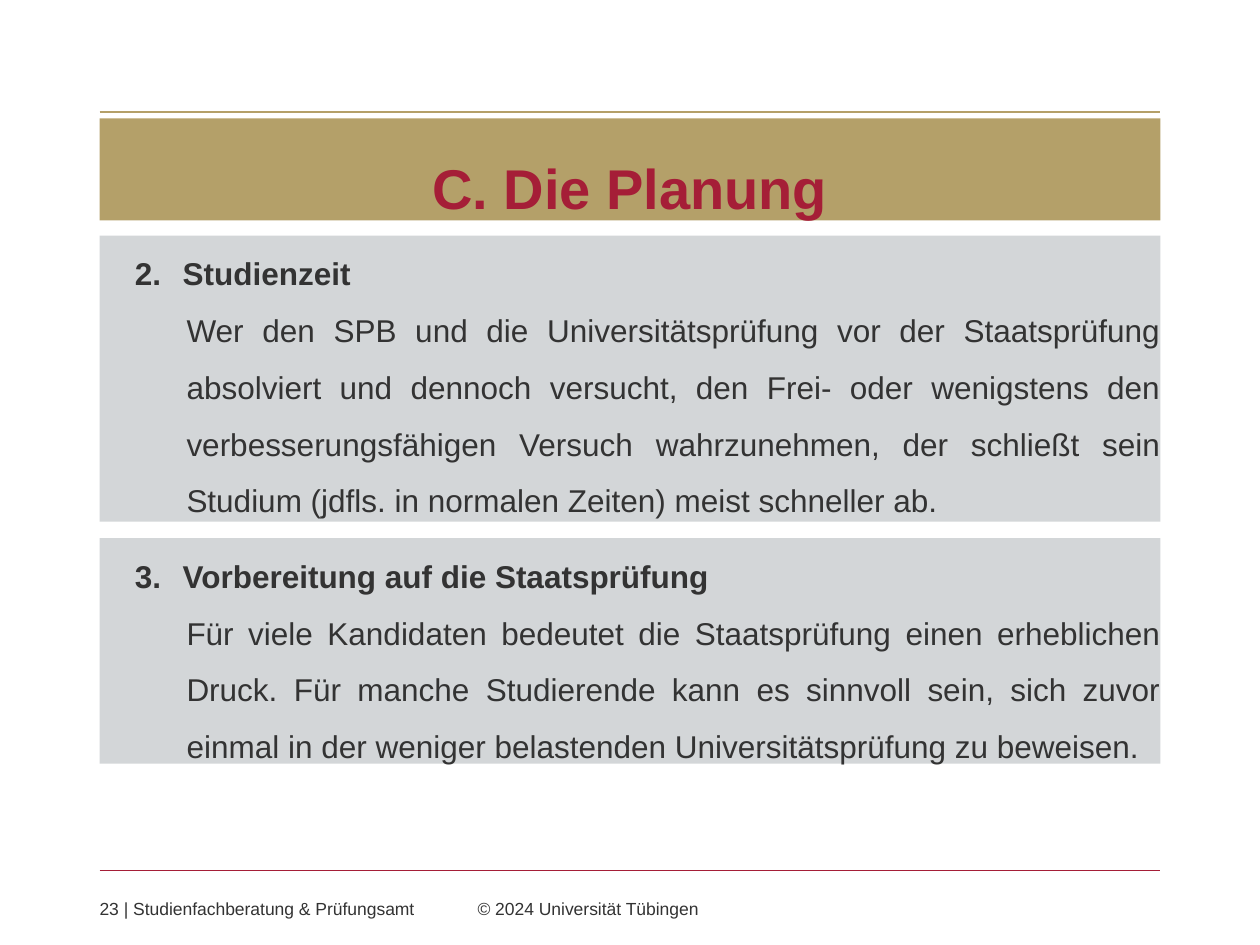
from dataclasses import dataclass

from lxml.etree import SubElement
from pptx import Presentation
from pptx.dml.color import RGBColor as Color
from pptx.enum.shapes import MSO_CONNECTOR as Connector, MSO_SHAPE as Shape
from pptx.enum.text import MSO_ANCHOR as Anchor, PP_ALIGN as Align
from pptx.oxml.ns import qn
from pptx.util import Inches, Pt


@dataclass(frozen=True)
class Theme:
    gold: Color = Color.from_string("B4A069")
    red: Color = Color.from_string("A51E37")
    grey: Color = Color.from_string("D3D6D8")
    ink: Color = Color.from_string("333333")
    font: str = "Arial"
    title_size: int = 32
    body_size: int = 18
    footer_size: int = 10
    line_spacing: float = 1.5


THEME = Theme()
SLIDE_WIDTH, SLIDE_HEIGHT = 10, 7.5
MARGIN = 0.79
CONTENT_WIDTH = SLIDE_WIDTH - 2 * MARGIN
SECTIONS = [
    (2, 1.87, 2.27, "Studienzeit",
     "Wer den SPB und die Universitätsprüfung vor der Staatsprüfung absolviert "
     "und dennoch versucht, den Frei- oder wenigstens den verbesserungsfähigen "
     "Versuch wahrzunehmen, der schließt sein Studium (jdfls. in normalen "
     "Zeiten) meist schneller ab."),
    (3, 4.27, 1.79, "Vorbereitung auf die Staatsprüfung",
     "Für viele Kandidaten bedeutet die Staatsprüfung einen erheblichen Druck. "
     "Für manche Studierende kann es sinnvoll sein, sich zuvor einmal in der "
     "weniger belastenden Universitätsprüfung zu beweisen."),
]


def apply_format(target, values):
    for name, value in values.items():
        setattr(target, name, value)


def content_box(top, height):
    return [Inches(value) for value in (MARGIN, top, CONTENT_WIDTH, height)]


def prepare_frame(shape, anchor=Anchor.TOP):
    frame = shape.text_frame
    apply_format(frame, dict(margin_left=0, margin_top=0, margin_right=0,
                             margin_bottom=0, word_wrap=True, vertical_anchor=anchor))
    return frame


def write(paragraph, text, size, color=THEME.ink, bold=False, **layout):
    run = paragraph.add_run()
    run.text = text
    apply_format(run.font, dict(name=THEME.font, size=Pt(size), bold=bold))
    run.font.color.rgb = color
    apply_format(paragraph, layout)


def set_indent(paragraph, left, first=0.0):
    properties = paragraph._p.get_or_add_pPr()
    properties.set("marL", str(Inches(left)))
    properties.set("indent", str(Inches(first)))
    return properties


def add_rule(slide, top, color):
    line = slide.shapes.add_connector(
        Connector.STRAIGHT, Inches(MARGIN), Inches(top),
        Inches(MARGIN + CONTENT_WIDTH), Inches(top))
    line.line.color.rgb = color
    line.line.width = Pt(0.75)
    SubElement(line._element.spPr, qn("a:effectLst"))


def add_panel(slide, top, height, color):
    panel = slide.shapes.add_shape(Shape.RECTANGLE, *content_box(top, height))
    panel.shadow.inherit = False
    panel.fill.solid()
    panel.fill.fore_color.rgb = color
    panel.line.fill.background()
    return panel


def add_title(slide, text):
    frame = prepare_frame(add_panel(slide, 0.94, 0.81, THEME.gold), Anchor.BOTTOM)
    write(frame.paragraphs[0], text, THEME.title_size, THEME.red, True,
          alignment=Align.CENTER, line_spacing=THEME.line_spacing)


def add_section(slide, number, top, height, heading, body):
    frame = prepare_frame(add_panel(slide, top, height, THEME.grey))
    first = frame.paragraphs[0]
    properties = set_indent(first, 0.66, -0.38)
    SubElement(properties, qn("a:buFont"), typeface="+mj-lt")
    SubElement(properties, qn("a:buAutoNum"), type="arabicPeriod", startAt=str(number))
    write(first, heading, THEME.body_size, bold=True,
          alignment=Align.LEFT, line_spacing=THEME.line_spacing)
    second = frame.add_paragraph()
    set_indent(second, 0.69)
    write(second, body, THEME.body_size,
          alignment=Align.JUSTIFY, line_spacing=THEME.line_spacing)


def add_footer(slide, text):
    frame = prepare_frame(slide.shapes.add_textbox(*content_box(7.13, 0.17)))
    paragraph = frame.paragraphs[0]
    tabs = SubElement(paragraph._p.get_or_add_pPr(), qn("a:tabLst"))
    SubElement(tabs, qn("a:tab"), pos=str(Inches(3)), algn="l")
    write(paragraph, text, THEME.footer_size)


def main():
    presentation = Presentation()
    apply_format(presentation, dict(slide_width=Inches(SLIDE_WIDTH),
                                    slide_height=Inches(SLIDE_HEIGHT)))
    slide = presentation.slides.add_slide(presentation.slide_layouts[6])
    add_rule(slide, 0.89, THEME.gold)
    add_rule(slide, 6.91, THEME.red)
    add_title(slide, "C. Die Planung")
    add_footer(slide, "23 | Studienfachberatung & Prüfungsamt\t© 2024 Universität Tübingen")
    for section in SECTIONS:
        add_section(slide, *section)
    presentation.save("out.pptx")


if __name__ == "__main__":
    main()
